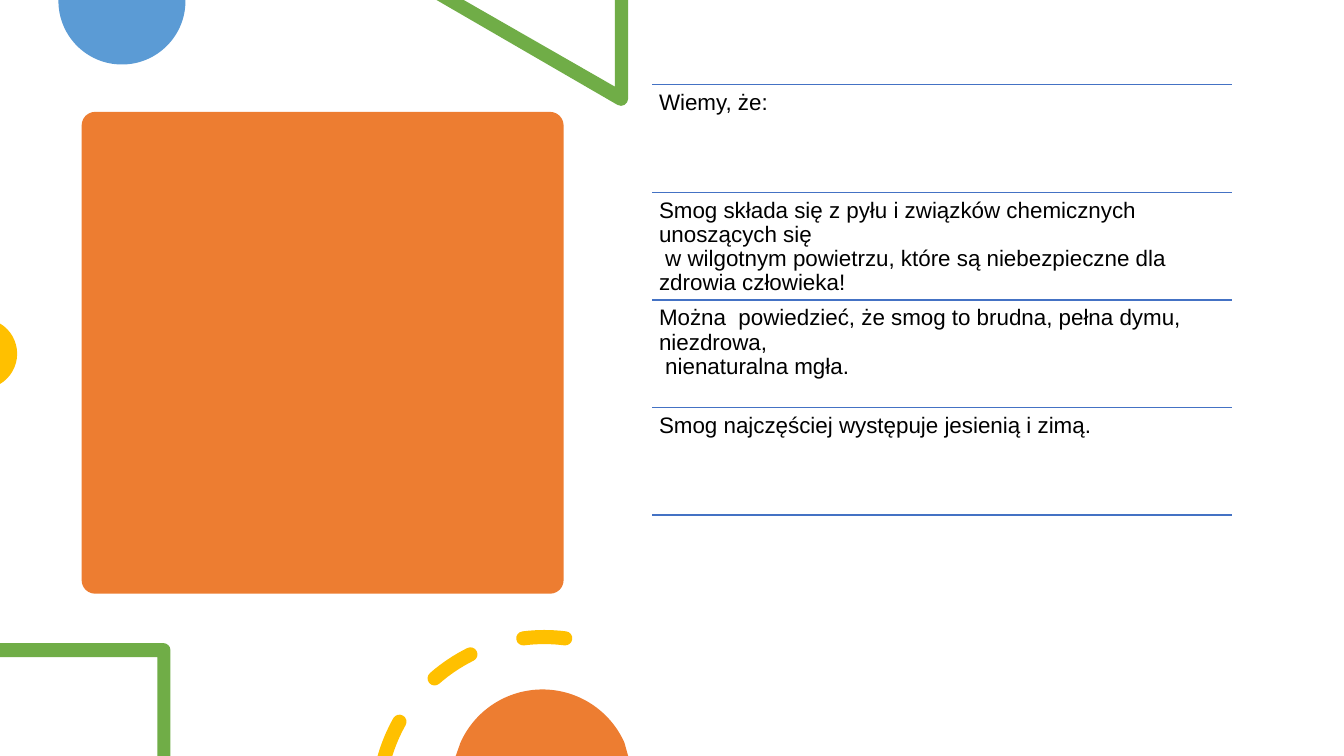
from math import ceil, cos, dist, radians, sin, tan

from lxml import etree
from pptx import Presentation
from pptx.dml.color import RGBColor
from pptx.enum.shapes import MSO_CONNECTOR, MSO_SHAPE
from pptx.enum.text import MSO_ANCHOR, PP_ALIGN
from pptx.oxml.ns import qn
from pptx.util import Inches, Pt

STRAIGHT = MSO_CONNECTOR.STRAIGHT
ROUNDED = MSO_SHAPE.ROUNDED_RECTANGLE
TOP, LEFT = MSO_ANCHOR.TOP, PP_ALIGN.LEFT

COLORS = {
    "orange": "ED7D31",
    "blue": "5B9BD5",
    "green": "70AD47",
    "yellow": "FFC000",
    "rule": "4472C4",
    "text": "000000",
}
WIDTH, HEIGHT = 13.33, 7.5
STROKE = 0.14
FACTS = [
    "Wiemy, że:",
    "Smog składa się z pyłu i związków chemicznych unoszących się\v"
    " w wilgotnym powietrzu, które są niebezpieczne dla zdrowia człowieka!",
    "Można  powiedzieć, że smog to brudna, pełna dymu, niezdrowa,\v"
    " nienaturalna mgła.",
    "Smog najczęściej występuje jesienią i zimą.",
]


def color(name):
    return RGBColor.from_string(COLORS[name])


def paint(shape, name):
    shape.shadow.inherit = False
    shape.fill.solid()
    shape.fill.fore_color.rgb = color(name)
    shape.line.fill.background()


def arc(cx, cy, radius, start, end):
    """Start point, then one Bezier step (three points) per quarter turn."""
    count = ceil(abs(end - start) / 90)
    turn = radians(end - start) / count
    pull = 4 / 3 * tan(turn / 4)

    def at(angle, tangent):
        return (cx + radius * (cos(angle) - tangent * sin(angle)),
                cy + radius * (sin(angle) + tangent * cos(angle)))

    angles = [radians(start) + turn * i for i in range(count + 1)]
    curves = [(at(a, pull), at(b, -pull), at(b, 0))
              for a, b in zip(angles, angles[1:])]
    return [((at(angles[0], 0)),)] + curves


def corners(*points):
    return [(point,) for point in points]


def add_outline(slide, contours, fill):
    builder, sizes = None, []
    for contour in contours:
        first = last = contour[0][0]
        start = [Inches(value) for value in first]
        if builder is None:
            builder = slide.shapes.build_freeform(*start, scale=1.0)
        else:
            builder.move_to(*start)
        vertices = []
        for step in contour[1:]:
            if len(step) == 1 and dist(step[0], last) < 0.002:
                continue
            vertices += [(Inches(x), Inches(y)) for x, y in step]
            sizes.append(len(step))
            last = step[-1]
        builder.add_line_segments(vertices, close=True)
    shape = builder.convert_to_shape()
    # Join each run of three points into one curve
    lines = iter(list(shape._element.iter(qn("a:lnTo"))))
    for size in sizes:
        line = next(lines)
        if size == 3:
            line.tag = qn("a:cubicBezTo")
            for other in (next(lines), next(lines)):
                line.append(other[0])
                other.getparent().remove(other)
    paint(shape, fill)


# Orange panel on the left
def add_panel(slide, left, top, width, height):
    panel = slide.shapes.add_shape(
        ROUNDED, Inches(left), Inches(top), Inches(width), Inches(height))
    panel.adjustments[0] = 0.028
    paint(panel, "orange")


# Shapes cut by the top edge: half disc and triangle corner
def add_top_decor(slide, left, top):
    disc = arc(left + 0.63, top + 0.01, 0.63, 0, 180)
    add_outline(slide, [
        disc + corners((left, top), (left + 1.26, top))], "blue")
    right, half = left + 5.65, STROKE / 2
    add_outline(slide, [
        arc(right - half, top + 0.98, half, 0, 120)
        + corners((right - 1.9, top), (right - 1.63, top),
                  (right - 0.13, top + 0.86), (right - 0.13, top), (right, top))
    ], "green")


# Shapes cut by the left edge: disc segment and square corner
def add_left_decor(slide, left, top, bottom):
    add_outline(slide, [arc(left - 0.18, top + 0.3, 0.35, -59, 59)], "yellow")
    right, upper, half = left + 1.69, bottom - 1.12, STROKE / 2
    add_outline(slide, [
        arc(right - half, upper + half, half, -90, 0)
        + corners((right, bottom), (right - 0.13, bottom),
                  (right - 0.13, upper + STROKE), (left, upper + STROKE),
                  (left, upper))
    ], "green")


# Dashed ring around a disc, both cut by the bottom edge
def add_bottom_decor(slide, center, bottom):
    radius, half = 1.65, STROKE / 2
    cy = bottom + 0.47

    def cap(angle, start):
        x = center + radius * cos(radians(angle))
        y = cy + radius * sin(radians(angle))
        return arc(x, y, half, start, start + 180)

    dashes = [arc(center, cy, radius + half, -164.1, -150.6)
              + cap(-150.6, -150.6)
              + arc(center, cy, radius - half, -150.6, -162.7)]
    for start, end in [(-131.3, -116.4), (-97.3, -82.8)]:
        dashes.append(arc(center, cy, radius + half, start, end)
                      + cap(end, end)
                      + arc(center, cy, radius - half, end, start)
                      + cap(start, start + 180))
    add_outline(slide, dashes, "yellow")
    middle = center - 0.02
    add_outline(slide, [
        arc(middle, bottom + 0.23, 0.89, -156, -24)
        + corners((middle + 0.85, bottom), (middle - 0.86, bottom))], "orange")


def add_rule(slide, left, right, y):
    rule = slide.shapes.add_connector(
        STRAIGHT, Inches(left), Inches(y), Inches(right), Inches(y))
    rule.line.color.rgb = color("rule")
    rule.line.width = Pt(1)
    etree.SubElement(rule._element.spPr, qn("a:effectLst"))


# Facts in equal rows, with a rule above each and below the last
def add_facts(slide, left, top, width, height):
    row = height / len(FACTS)
    for index, fact in enumerate(FACTS):
        y = top + index * row
        add_rule(slide, left, left + width, y)
        box = slide.shapes.add_textbox(
            Inches(left), Inches(y), Inches(width), Inches(row))
        frame = box.text_frame
        frame.word_wrap = True
        frame.vertical_anchor = TOP
        frame.margin_left = frame.margin_right = Pt(4.8)
        frame.margin_top = frame.margin_bottom = Pt(4.8)
        frame.text = fact
        paragraph = frame.paragraphs[0]
        paragraph.alignment = LEFT
        paragraph.line_spacing = 0.9
        for run in paragraph.runs:
            run.font.name = "Arial"
            run.font.size = Pt(16)
            run.font.color.rgb = color("text")
    add_rule(slide, left, left + width, top + height)


def main():
    deck = Presentation()
    deck.slide_width, deck.slide_height = Inches(WIDTH), Inches(HEIGHT)
    slide = deck.slides.add_slide(deck.slide_layouts[6])
    add_panel(slide, 0.81, 1.11, 4.78, 4.78)
    add_top_decor(slide, 0.58, 0)
    add_left_decor(slide, 0, 3.21, HEIGHT)
    add_bottom_decor(slide, 5.4, HEIGHT)
    add_facts(slide, 6.47, 0.84, 5.75, 4.27)
    deck.save("out.pptx")


if __name__ == "__main__":
    main()
